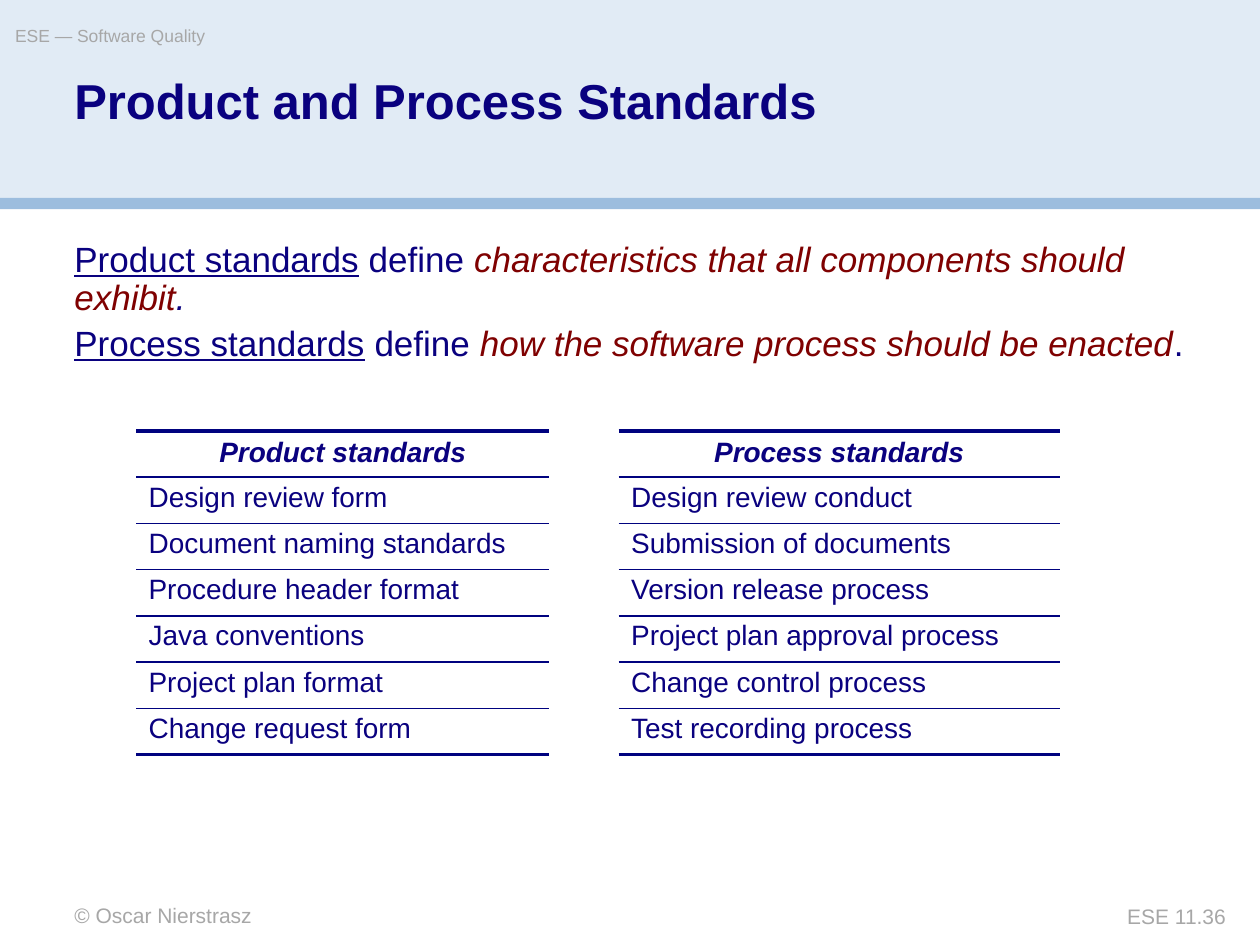
from lxml.etree import SubElement
from pptx import Presentation
from pptx.dml.color import RGBColor
from pptx.enum.shapes import MSO_SHAPE
from pptx.enum.text import MSO_ANCHOR, PP_ALIGN
from pptx.oxml.ns import qn
from pptx.util import Inches, Pt

NAVY, MAROON, GREY, RULE = "0A017F", "7F0101", "A7A7A7", "00027F"
BANDS = [(0, 1.58, "E1EBF5"), (1.57, 0.09, "9CBDDE")]  # top, height, colour

HEADER = "ESE — Software Quality"
TITLE = "Product and Process Standards"
AUTHOR = "© Oscar Nierstrasz"
PAGE = "ESE 11.36"

TERM = {"underline": True}
MEANING = {"color": MAROON, "italic": True}
DEFINITIONS = [
    [("Product standards", TERM), (" define ", {}),
     ("characteristics that all components should exhibit", MEANING), (".", {"italic": True})],
    [("Process standards", TERM), (" define ", {}),
     ("how the software process should be enacted", MEANING), (".", {})],
]

STANDARDS = [
    ("Product standards", "Process standards"),
    ("Design review form", "Design review conduct"),
    ("Document naming standards", "Submission of documents"),
    ("Procedure header format", "Version release process"),
    ("Java conventions", "Project plan approval process"),
    ("Project plan format", "Change control process"),
    ("Change request form", "Test recording process"),
]
COLUMN_WIDTHS = [3.28, 0.55, 3.5]  # the middle column is an empty gap
ROW_HEIGHT = 0.35
THIN, THICK = 1, 2.25


def rgb(color):
    return RGBColor.from_string(color)


def add_run(paragraph, text, size, color=NAVY, bold=False, italic=False, underline=False):
    run = paragraph.add_run()
    run.text = text
    font = run.font
    font.name, font.size, font.color.rgb = "Arial", Pt(size), rgb(color)
    font.bold, font.italic, font.underline = bold, italic, underline


def add_text(slide, box, paragraphs, size, align=PP_ALIGN.LEFT, anchor=MSO_ANCHOR.TOP,
             line_spacing=1.0, space_before=0, wrap=True):
    """Add a text box without margins; each paragraph is a list of (text, style) runs."""
    frame = slide.shapes.add_textbox(*map(Inches, box)).text_frame
    frame.margin_left = frame.margin_right = frame.margin_top = frame.margin_bottom = 0
    frame.word_wrap, frame.vertical_anchor = wrap, anchor
    for i, runs in enumerate(paragraphs):
        paragraph = frame.add_paragraph() if i else frame.paragraphs[0]
        paragraph.alignment, paragraph.line_spacing = align, line_spacing
        paragraph.space_before = Pt(space_before)
        for text, style in runs:
            add_run(paragraph, text, size, **style)


def set_borders(cell, top, bottom):
    """Rule the cell above and below; a width of 0 means no line."""
    properties = cell._tc.get_or_add_tcPr()
    for side, width in (("L", 0), ("R", 0), ("T", top), ("B", bottom)):
        line = SubElement(properties, qn(f"a:ln{side}"), w=str(Pt(width)))
        if width:
            fill = SubElement(line, qn("a:solidFill"))
            SubElement(fill, qn("a:srgbClr"), val=RULE)
        else:
            SubElement(line, qn("a:noFill"))


def add_standards_table(slide, left, top):
    row_count = len(STANDARDS)
    table = slide.shapes.add_table(
        row_count, len(COLUMN_WIDTHS), Inches(left), Inches(top),
        Inches(sum(COLUMN_WIDTHS)), Inches(ROW_HEIGHT * row_count)).table
    table.first_row = table.horz_banding = False
    for column, width in zip(table.columns, COLUMN_WIDTHS):
        column.width = Inches(width)
    for r, (product, process) in enumerate(STANDARDS):
        table.rows[r].height = Inches(ROW_HEIGHT)
        heading = r == 0
        top_rule = THICK if heading else THIN
        bottom_rule = THICK if r == row_count - 1 else THIN
        for c, text in enumerate((product, "", process)):
            cell = table.cell(r, c)
            set_borders(cell, top_rule if text else 0, bottom_rule if text else 0)
            cell.fill.background()
            paragraph = cell.text_frame.paragraphs[0]
            if not text:
                paragraph.font.size = Pt(16)
                continue
            cell.vertical_anchor = MSO_ANCHOR.MIDDLE if heading else MSO_ANCHOR.TOP
            paragraph.alignment = PP_ALIGN.CENTER if heading else PP_ALIGN.LEFT
            paragraph.line_spacing = 0.95
            add_run(paragraph, text, 16, bold=heading, italic=heading)


def main():
    presentation = Presentation()
    presentation.slide_width, presentation.slide_height = Inches(10), Inches(7.5)
    slide = presentation.slides.add_slide(presentation.slide_layouts[6])

    for top, height, color in BANDS:
        band = slide.shapes.add_shape(
            MSO_SHAPE.RECTANGLE, 0, Inches(top), Inches(10), Inches(height))
        band.shadow.inherit = False
        band.fill.solid()
        band.fill.fore_color.rgb = rgb(color)
        band.line.fill.background()

    grey = {"color": GREY}
    add_text(slide, (0.59, 7.16, 4.17, 0.2), [[(AUTHOR, grey)]], 12)
    add_text(slide, (0.12, 0.2, 5.9, 0.28), [[(HEADER, grey)]], 10, wrap=False)
    add_text(slide, (8.25, 7.17, 1.48, 0.2), [[(PAGE, grey)]], 12, align=PP_ALIGN.RIGHT)
    add_text(slide, (0.59, 0.61, 8.83, 0.89), [[(TITLE, {"bold": True})]], 28,
             line_spacing=0.9)
    add_text(slide, (0.59, 1.81, 8.82, 1.19), DEFINITIONS, 20,
             anchor=MSO_ANCHOR.MIDDLE, line_spacing=0.9, space_before=4.6)
    add_standards_table(slide, 1.08, 3.42)

    presentation.save("out.pptx")


if __name__ == "__main__":
    main()
